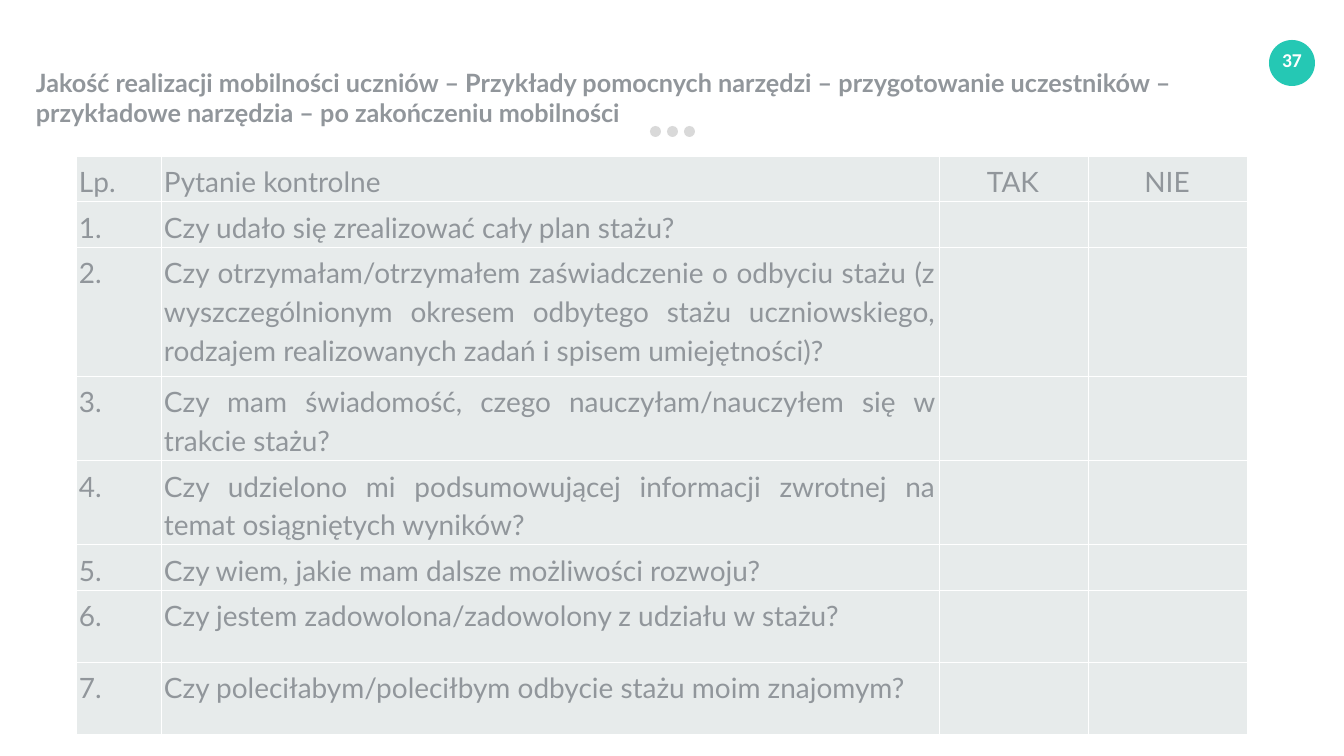
from dataclasses import dataclass

from lxml import etree
from pptx import Presentation
from pptx.dml.color import RGBColor
from pptx.enum.shapes import MSO_SHAPE
from pptx.enum.text import MSO_ANCHOR, PP_ALIGN
from pptx.oxml.ns import qn
from pptx.util import Emu, Pt

OVAL = MSO_SHAPE.OVAL
TOP = MSO_ANCHOR.TOP
LEFT, CENTER, JUSTIFY = PP_ALIGN.LEFT, PP_ALIGN.CENTER, PP_ALIGN.JUSTIFY

EMU_PER_PX = 914400 / 50.4
SLIDE_WIDTH, SLIDE_HEIGHT = 1344, 756

TITLE = (
    "Jakość realizacji mobilności uczniów – Przykłady pomocnych narzędzi – przygotowanie uczestników –\v"
    "przykładowe narzędzia – po zakończeniu mobilności"
)
HEADINGS = ["Lp.", "Pytanie kontrolne", "TAK", "NIE"]
HEADING_ALIGNS = [LEFT, LEFT, CENTER, CENTER]
QUESTION_ALIGNS = [LEFT, JUSTIFY, CENTER, CENTER]
COLUMN_WIDTHS = [85, 778, 149, 159]
HEADING_HEIGHT = 43
QUESTIONS = [
    ("Czy udało się zrealizować cały plan stażu?", 43),
    ("Czy otrzymałam/otrzymałem zaświadczenie o odbyciu stażu (z wyszczególnionym okresem "
     "odbytego stażu uczniowskiego, rodzajem realizowanych zadań i spisem umiejętności)?", 129),
    ("Czy mam świadomość, czego nauczyłam/nauczyłem się w trakcie stażu?", 72),
    ("Czy udzielono mi podsumowującej informacji zwrotnej na temat osiągniętych wyników?", 72),
    ("Czy wiem, jakie mam dalsze możliwości rozwoju?", 43),
    ("Czy jestem zadowolona/zadowolony z udziału w stażu?", 72),
    ("Czy poleciłabym/poleciłbym odbycie stażu moim znajomym?", 72),
]


@dataclass(frozen=True)
class Theme:
    accent: str = "25C8B4"
    dot: str = "D9D9D9"
    text: str = "91969B"
    cell: str = "E7EBEB"
    white: str = "FFFFFF"
    body_font: str = "Lato"
    number_font: str = "Calibri"
    title_size: int = 36
    table_size: int = 40
    number_size: int = 28
    border_width: int = 1


def px(length):
    return Emu(round(length * EMU_PER_PX))


class SlideBuilder:
    def __init__(self, slide, theme):
        self.slide = slide
        self.theme = theme

    def format_runs(self, paragraph, font_name, size, color, bold):
        for run in paragraph.runs:
            run.font.name = font_name
            run.font.size = Pt(size)
            run.font.bold = bold
            run.font.color.rgb = RGBColor.from_string(color)

    def circle(self, left, top, diameter, color, parent=None):
        shapes = (parent or self.slide).shapes
        circle = shapes.add_shape(OVAL, px(left), px(top), px(diameter), px(diameter))
        circle.shadow.inherit = False
        circle.fill.solid()
        circle.fill.fore_color.rgb = RGBColor.from_string(color)
        circle.line.fill.background()

    def dot_row(self, left, top, diameter, pitch, count):
        group = self.slide.shapes.add_group_shape()
        for index in range(count):
            self.circle(left + index * pitch, top, diameter, self.theme.dot, group)

    def text(self, box, content, font_name, size, color, align=LEFT, wrap=True):
        textbox = self.slide.shapes.add_textbox(*map(px, box))
        frame = textbox.text_frame
        frame.word_wrap = wrap
        frame.text = content
        paragraph = frame.paragraphs[0]
        paragraph.alignment = align
        self.format_runs(paragraph, font_name, size, color, True)

    def table(self, left, top, widths, heights, rows, aligns):
        frame = self.slide.shapes.add_table(
            len(rows), len(widths), px(left), px(top), px(sum(widths)), px(sum(heights)))
        table = frame.table
        for column, width in zip(table.columns, widths):
            column.width = px(width)
        for row, height, contents, row_aligns in zip(table.rows, heights, rows, aligns):
            row.height = px(height)
            for cell, content, align in zip(row.cells, contents, row_aligns):
                self.cell(cell, content, align)

    def cell(self, cell, content, align):
        theme = self.theme
        cell.margin_left, cell.margin_right = px(3), px(4)
        cell.margin_top, cell.margin_bottom = px(4), px(3)
        cell.vertical_anchor = TOP
        cell.fill.solid()
        cell.fill.fore_color.rgb = RGBColor.from_string(theme.cell)
        self.cell_borders(cell)
        if content:
            cell.text_frame.text = content
            paragraph = cell.text_frame.paragraphs[0]
            paragraph.alignment = align
            paragraph.line_spacing = 1.15
            paragraph.space_after = Pt(6)
            self.format_runs(paragraph, theme.body_font, theme.table_size, theme.text, False)

    def cell_borders(self, cell):
        """Put the border lines ahead of the fill, as the schema orders them."""
        properties = cell._tc.get_or_add_tcPr()
        for index, side in enumerate(("a:lnL", "a:lnR", "a:lnT", "a:lnB")):
            line = etree.Element(qn(side), w=str(Pt(self.theme.border_width)))
            fill = etree.SubElement(line, qn("a:solidFill"))
            etree.SubElement(fill, qn("a:srgbClr"), val=self.theme.white)
            properties.insert(index, line)


def main():
    presentation = Presentation()
    presentation.slide_width = px(SLIDE_WIDTH)
    presentation.slide_height = px(SLIDE_HEIGHT)
    theme = Theme()
    builder = SlideBuilder(presentation.slides.add_slide(presentation.slide_layouts[6]), theme)

    builder.circle(1269, 40, 46, theme.accent)
    builder.text((1270, 45, 44, 34), "37", theme.number_font, theme.number_size,
                 theme.white, CENTER, wrap=False)
    builder.dot_row(650, 126, 11, 17, 3)
    builder.text((31, 65, 1246, 66), TITLE, theme.body_font, theme.title_size, theme.text)

    question_rows = [[f"{number}.", question, "", ""]
                     for number, (question, _) in enumerate(QUESTIONS, start=1)]
    builder.table(
        76, 156, COLUMN_WIDTHS,
        heights=[HEADING_HEIGHT] + [height for _, height in QUESTIONS],
        rows=[HEADINGS] + question_rows,
        aligns=[HEADING_ALIGNS] + [QUESTION_ALIGNS] * len(QUESTIONS),
    )
    presentation.save("out.pptx")


if __name__ == "__main__":
    main()
